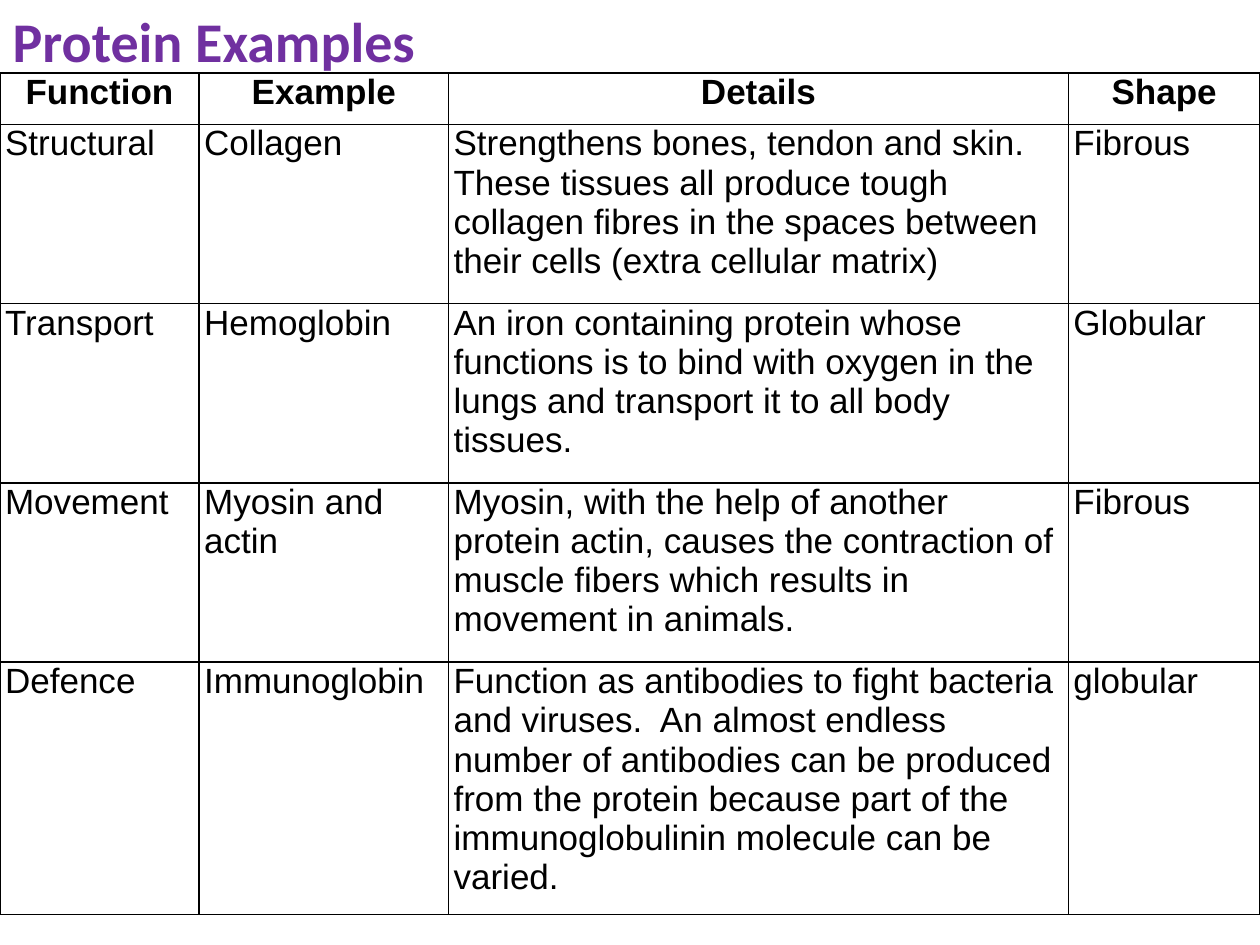
from lxml import etree
from pptx import Presentation
from pptx import util as u
from pptx.dml.color import RGBColor
from pptx.enum import text
from pptx.oxml import ns

COLUMN_WIDTHS = [113.76, 142.56, 354.24, 109.44]
ROW_HEIGHTS = [29.2, 102.5, 102.5, 102.5, 131]
PROTEINS = [
    ["Function", "Example", "Details", "Shape"],
    ["Structural", "Collagen",
     "Strengthens bones, tendon and skin. These tissues all produce tough "
     "collagen fibres in the spaces between their cells (extra cellular matrix)",
     "Fibrous"],
    ["Transport", "Hemoglobin",
     "An iron containing protein whose functions is to bind with oxygen in "
     "the lungs and transport it to all body tissues.",
     "Globular"],
    ["Movement", "Myosin and actin",
     "Myosin, with the help of another protein actin, causes the contraction "
     "of muscle fibers which results in movement in animals.",
     "Fibrous"],
    ["Defence", "Immunoglobin",
     "Function as antibodies to fight bacteria and viruses.  An almost endless "
     "number of antibodies can be produced from the protein because part of "
     "the immunoglobulinin molecule can be varied.",
     "globular"],
]


def color(hex_value):
    return RGBColor.from_string(hex_value)


def format_text(paragraph, font_name, size, hex_value, bold, align):
    paragraph.alignment = align
    font = paragraph.font
    font.name, font.size, font.bold = font_name, u.Pt(size), bold
    font.color.rgb = color(hex_value)


def add_borders(cell, hex_value, width):
    """Outline all four sides; the lines must precede the fill in tcPr."""
    properties = cell._tc.get_or_add_tcPr()
    for position, side in enumerate(("lnL", "lnR", "lnT", "lnB")):
        line = etree.Element(ns.qn(f"a:{side}"), w=str(u.Pt(width)))
        fill = etree.SubElement(line, ns.qn("a:solidFill"))
        etree.SubElement(fill, ns.qn("a:srgbClr"), val=hex_value)
        properties.insert(position, line)


def fill_cell(cell, wording, is_header):
    cell.text = wording
    cell.margin_left = cell.margin_right = u.Pt(2.9)
    cell.margin_top = cell.margin_bottom = 0
    cell.vertical_anchor = text.MSO_ANCHOR.TOP
    align = text.PP_ALIGN.CENTER if is_header else text.PP_ALIGN.LEFT
    format_text(cell.text_frame.paragraphs[0], "Arial", 20, "000000",
                is_header, align)
    cell.fill.background()
    add_borders(cell, "000000", 1)


def add_protein_table(slide):
    frame = slide.shapes.add_table(
        len(ROW_HEIGHTS), len(COLUMN_WIDTHS), 0, u.Pt(41.8),
        u.Pt(sum(COLUMN_WIDTHS)), u.Pt(sum(ROW_HEIGHTS)))
    table = frame.table
    table.horz_banding = False
    for column, width in zip(table.columns, COLUMN_WIDTHS):
        column.width = u.Pt(width)
    for row, height in zip(table.rows, ROW_HEIGHTS):
        row.height = u.Pt(height)
    for row_index, entries in enumerate(PROTEINS):
        for column_index, wording in enumerate(entries):
            fill_cell(table.cell(row_index, column_index), wording,
                      row_index == 0)


def set_title(slide, wording):
    title = slide.shapes.title
    title.left, title.top = 0, 0
    title.width, title.height = u.Pt(378), u.Pt(46)
    frame = title.text_frame
    frame.text = wording
    frame.word_wrap = True
    frame.auto_size = text.MSO_AUTO_SIZE.SHAPE_TO_FIT_TEXT
    frame.vertical_anchor = text.MSO_ANCHOR.TOP
    format_text(frame.paragraphs[0], "Calibri", 32, "7030A0", True,
                text.PP_ALIGN.LEFT)


def main():
    deck = Presentation()
    deck.slide_width, deck.slide_height = u.Pt(720), u.Pt(540)
    slide = deck.slides.add_slide(deck.slide_layouts.get_by_name("Title Only"))
    set_title(slide, "Protein Examples")
    add_protein_table(slide)
    deck.save("out.pptx")


if __name__ == "__main__":
    main()
